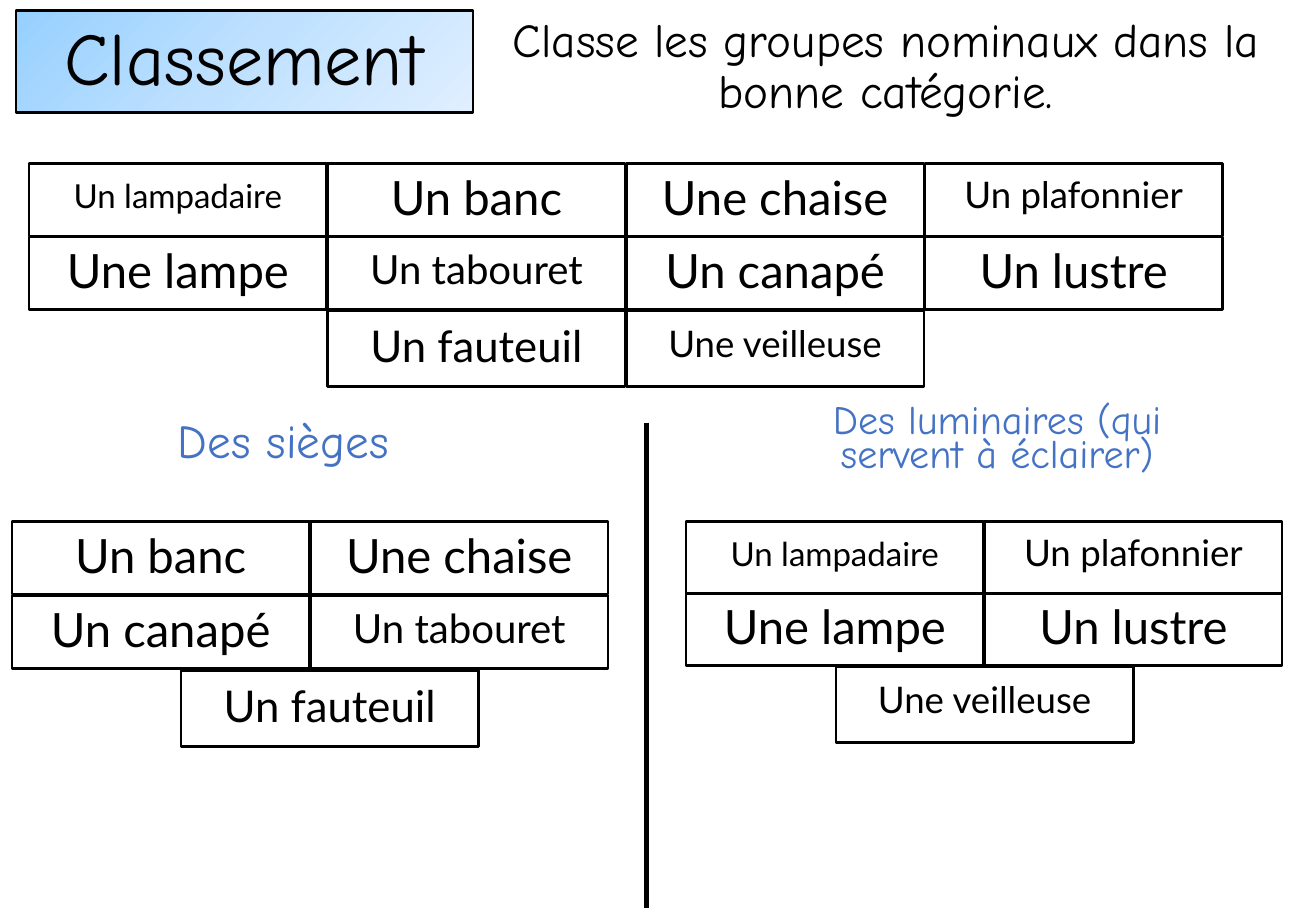
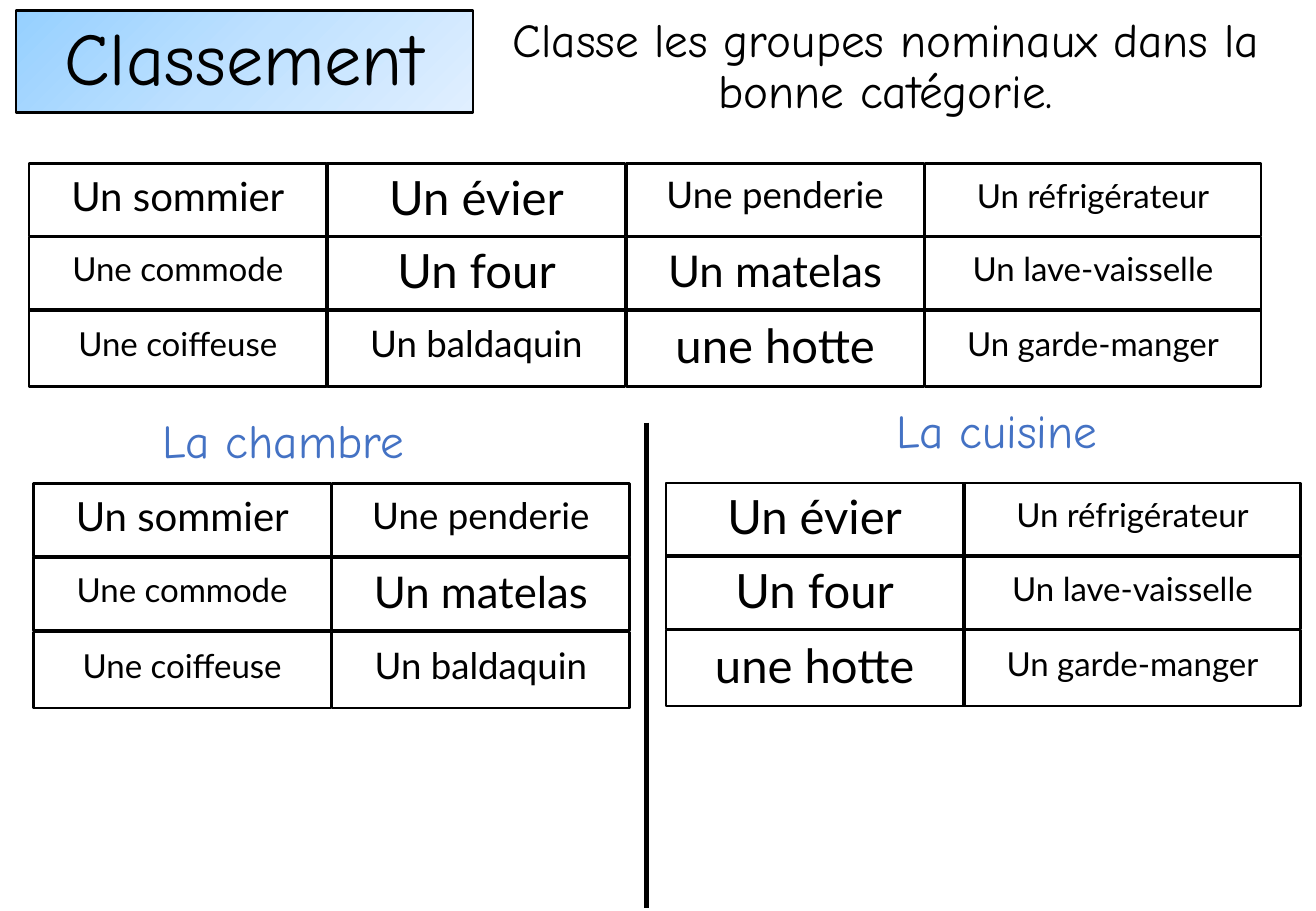
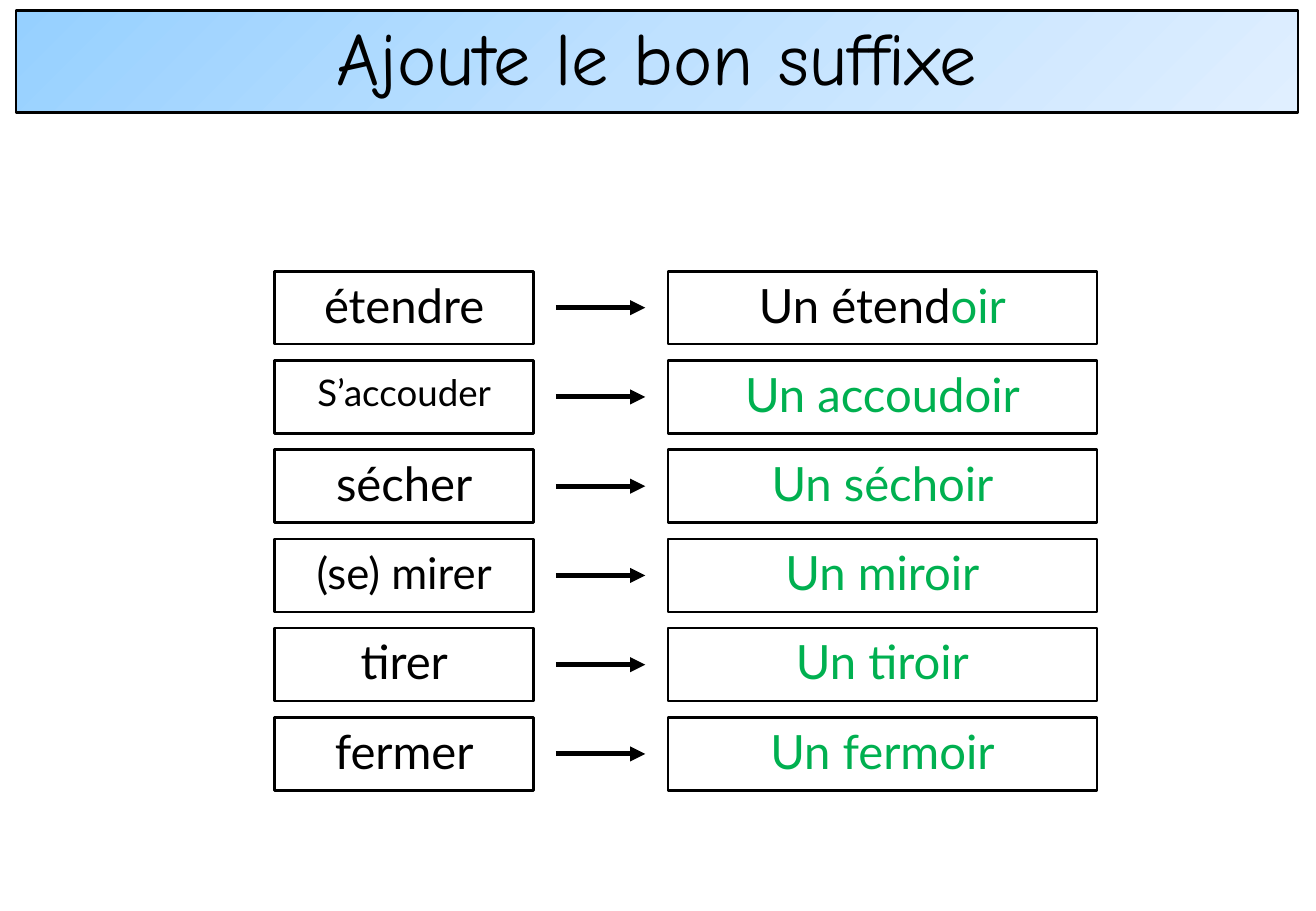
"""Build three French vocabulary slides: two sorting exercises and one on suffixes."""
from copy import deepcopy

from lxml import etree
from pptx import Presentation
from pptx.dml.color import RGBColor
from pptx.enum import shapes, text
from pptx.oxml.ns import qn
from pptx.util import Pt


class Theme:
    black = RGBColor.from_string("000000")
    heading = RGBColor.from_string("4472C4")
    answer = RGBColor.from_string("00B050")
    gradient = [(0, "96D0FF"), (0.5, "BFE1FF"), (1, "E0EFFF")]
    title_font = "Comic Neue"
    word_font = "Lato"
    title_size = 44
    size = 28
    line_spacing = {44: 0.9, 28: 0.9, 25.9: 0.9, 23.8: 0.8, 21.7: 0.7, 19.6: 0.7}
    word_sizes = {
        25.9: ["Un fauteuil", "Un matelas", "(se) mirer"],
        23.8: ["Un tabouret", "Un sommier"],
        21.7: ["Un plafonnier", "Une veilleuse", "Une penderie", "Un baldaquin", "S’accouder"],
        19.6: ["Un lampadaire", "Une commode", "Une coiffeuse", "Un réfrigérateur",
               "Un lave-vaisselle", "Un garde-manger"],
    }
    border = 1.5
    rule = 3
    word_width = 176.4
    wide_width = 199.4
    column_pitch = 177
    row_height = 43.2
    tall_row_height = 45


def write(shape, runs, font, size, space_before=10, line_spacing=None):
    frame = shape.text_frame
    frame.word_wrap = True
    frame.auto_size = text.MSO_AUTO_SIZE.NONE
    paragraph = frame.paragraphs[0]
    paragraph.alignment = text.PP_ALIGN.CENTER
    paragraph.line_spacing = line_spacing or Theme.line_spacing[size]
    paragraph.space_before = Pt(space_before)
    paragraph.font.name = font
    paragraph.font.size = Pt(size)
    for words, color in runs:
        run = paragraph.add_run()
        run.text = words
        run.font.color.rgb = color
    return paragraph


def add_word_box(slide, left, top, width, height, runs):
    shape = slide.shapes.add_shape(
        shapes.MSO_SHAPE.RECTANGLE, Pt(left), Pt(top), Pt(width), Pt(height))
    shape.shadow.inherit = False
    shape.fill.background()
    shape.line.color.rgb = Theme.black
    shape.line.width = Pt(Theme.border)
    shape.text_frame.vertical_anchor = text.MSO_ANCHOR.MIDDLE
    words = "".join(part for part, color in runs)
    size = next((size for size, group in Theme.word_sizes.items() if words in group), Theme.size)
    write(shape, runs, Theme.word_font, size)


presentation = Presentation()
presentation.slide_width, presentation.slide_height = Pt(780), Pt(540)
content_layout, title_layout = presentation.slide_layouts[1], presentation.slide_layouts[5]

titles = [
    (content_layout, "Classement", 271),
    (content_layout, "Classement", 271),
    (title_layout, "Ajoute le bon suffixe", 760),
]
for layout, words, width in titles:
    title = presentation.slides.add_slide(layout).shapes.title
    title.left, title.top, title.width, title.height = Pt(9.4), Pt(6.2), Pt(width), Pt(60.5)
    title.line.color.rgb = Theme.black
    title.line.width = Pt(Theme.border)
    title.fill.gradient()
    title.fill.gradient_angle = 315
    stops = title._element.spPr.find(".//" + qn("a:gsLst"))
    stops.insert(1, deepcopy(stops[0]))
    for stop, (position, color) in zip(title.fill.gradient_stops, Theme.gradient):
        stop.position = position
        stop.color.rgb = RGBColor.from_string(color)
    title.text_frame.vertical_anchor = text.MSO_ANCHOR.MIDDLE
    write(title, [(words, Theme.black)], Theme.title_font, Theme.title_size, space_before=0)

furniture_slide, rooms_slide, suffix_slide = presentation.slides
connectors = []

headings = [
    (furniture_slide, [("Des sièges", 28, 0.9),
                       ("Des luminaires (qui servent à éclairer)", 23.8, 0.7)]),
    (rooms_slide, [("La chambre", 28, 0.9), ("La cuisine", 28, 0.9)]),
]
heading_places = [(38, 244, 69), (461, 238.3, 51)]
for slide, categories in headings:
    instruction = slide.placeholders[1]
    instruction.left, instruction.top = Pt(280), Pt(6.5)
    instruction.width, instruction.height = Pt(490), Pt(90)
    paragraph = write(
        instruction, [("Classe les groupes nominaux dans la bonne catégorie.", Theme.black)],
        Theme.title_font, Theme.size)
    properties = paragraph._p.get_or_add_pPr()
    properties.set("marL", "0")
    properties.set("indent", "0")
    properties.insert_element_before(
        etree.Element(qn("a:buNone")), "a:tabLst", "a:defRPr", "a:extLst")
    for (words, size, spacing), (left, top, height) in zip(categories, heading_places):
        box = slide.shapes.add_textbox(Pt(left), Pt(top), Pt(260), Pt(height))
        write(box, [(words, Theme.heading)], Theme.title_font, size, line_spacing=spacing)
    connectors.append(slide.shapes.add_connector(
        shapes.MSO_CONNECTOR.STRAIGHT, Pt(383), Pt(250.6), Pt(383), Pt(538)))

regular, wide = Theme.word_width, Theme.wide_width
word_grids = [
    (furniture_slide, 17.2, 96.8, 43.6, regular, [
        ["Un lampadaire", "Un banc", "Une chaise", "Un plafonnier"],
        ["Une lampe", "Un tabouret", "Un canapé", "Un lustre"],
        [None, "Un fauteuil", "Une veilleuse", None]]),
    (furniture_slide, 7, 309, 44, regular, [
        ["Un banc", "Une chaise"],
        ["Un canapé", "Un tabouret"]]),
    (furniture_slide, 107.2, 397.5, 44, regular, [["Un fauteuil"]]),
    (furniture_slide, 406.6, 309, 42.4, regular, [
        ["Un lampadaire", "Un plafonnier"],
        ["Une lampe", "Un lustre"]]),
    (furniture_slide, 495.4, 395.2, 44, regular, [["Une veilleuse"]]),
    (rooms_slide, 17.2, 96.8, 43.6, wide, [
        ["Un sommier", "Un évier", "Une penderie", "Un réfrigérateur"],
        ["Une commode", "Un four", "Un matelas", "Un lave-vaisselle"],
        ["Une coiffeuse", "Un baldaquin", "une hotte", "Un garde-manger"]]),
    (rooms_slide, 19.8, 286.6, 44, regular, [
        ["Un sommier", "Une penderie"],
        ["Une commode", "Un matelas"],
        ["Une coiffeuse", "Un baldaquin"]]),
    (rooms_slide, 394.6, 286.2, 43.6, wide, [
        ["Un évier", "Un réfrigérateur"],
        ["Un four", "Un lave-vaisselle"],
        ["une hotte", "Un garde-manger"]]),
]
for slide, left, top, row_pitch, last_width, rows in word_grids:
    for row_index, row in enumerate(rows):
        is_tall = len(rows) != 2 and row is rows[-1]
        height = Theme.tall_row_height if is_tall else Theme.row_height
        for column, word in enumerate(row):
            if word:
                width = last_width if column == len(row) - 1 else regular
                add_word_box(slide, left + column * Theme.column_pitch, top + row_index * row_pitch,
                             width, height, [(word, Theme.black)])

suffix_pairs = [
    ("étendre", [("Un étend", Theme.black), ("oir", Theme.answer)]),
    ("S’accouder", [("Un accoudoir", Theme.answer)]),
    ("sécher", [("Un séchoir", Theme.answer)]),
    ("(se) mirer", [("Un miroir", Theme.answer)]),
    ("tirer", [("Un tiroir", Theme.answer)]),
    ("fermer", [("Un fermoir", Theme.answer)]),
]
arrows = []
for index, (verb, noun) in enumerate(suffix_pairs):
    top = 160.8 + 52.9 * index
    middle = Pt(top + Theme.row_height / 2)
    add_word_box(suffix_slide, 162.8, top, 153.5, Theme.row_height, [(verb, Theme.black)])
    arrows.append(suffix_slide.shapes.add_connector(
        shapes.MSO_CONNECTOR.STRAIGHT, Pt(329.5), middle, Pt(382.5), middle))
    add_word_box(suffix_slide, 395.8, top, 254.4, Theme.row_height, noun)

for connector in connectors + arrows:
    connector.line.color.rgb = Theme.black
    connector.line.width = Pt(Theme.rule)
    etree.SubElement(connector._element.spPr, qn("a:effectLst"))
for arrow in arrows:
    outline = arrow._element.spPr.find(qn("a:ln"))
    etree.SubElement(outline, qn("a:tailEnd"), type="triangle")

presentation.save("out.pptx")
